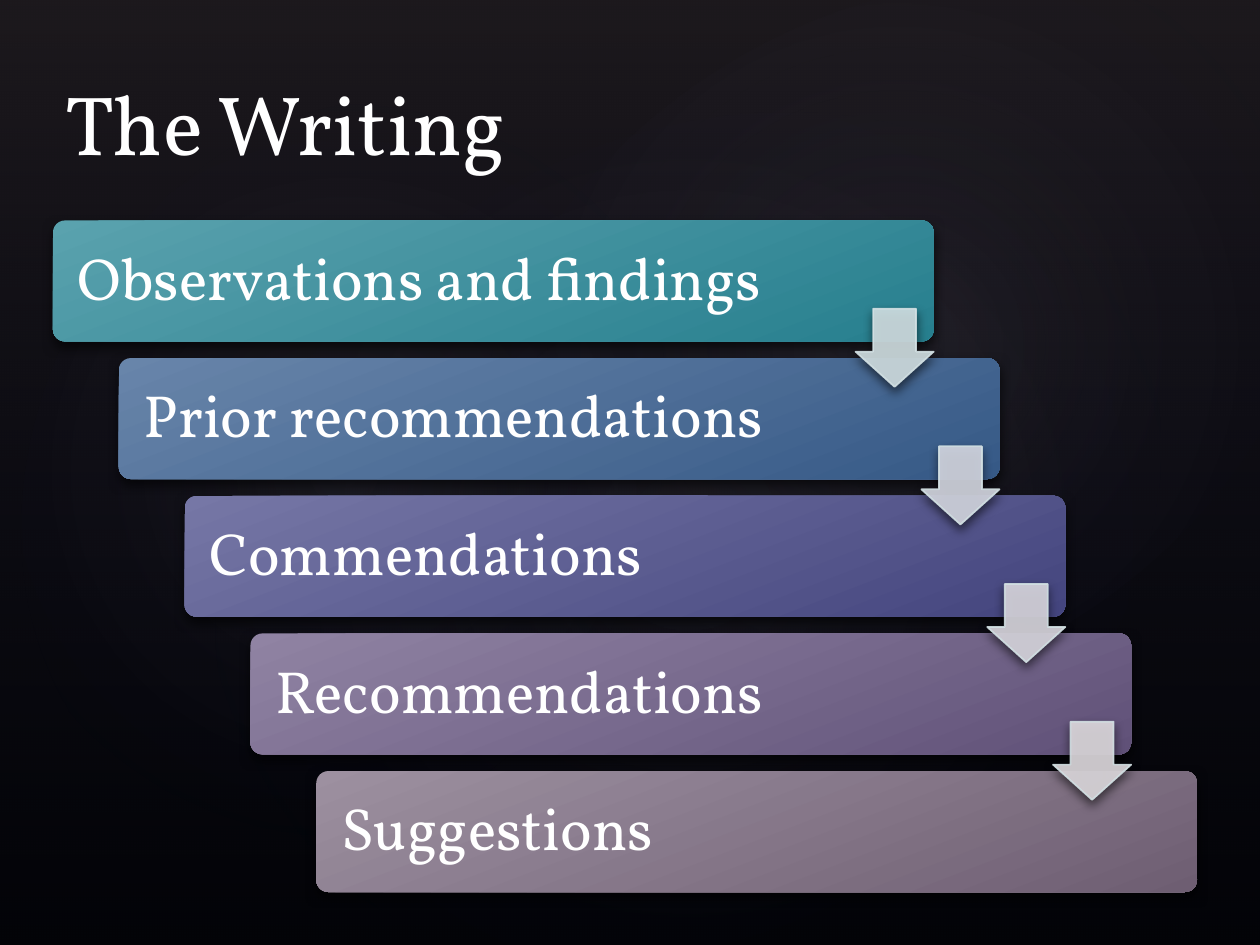
import pptx
import pptx.dml.color
import pptx.enum.shapes
import pptx.enum.text
import pptx.oxml
import pptx.oxml.ns
import pptx.util

RGBColor = pptx.dml.color.RGBColor
Inches = pptx.util.Inches
Pt = pptx.util.Pt
Shapes = pptx.enum.shapes.MSO_SHAPE
Anchor = pptx.enum.text.MSO_ANCHOR
Align = pptx.enum.text.PP_ALIGN

BLACK = RGBColor(0x00, 0x00, 0x00)
WHITE = RGBColor(0xFF, 0xFF, 0xFF)
NAVY = RGBColor(0x24, 0x28, 0x52)
TAUPE = RGBColor(0x50, 0x46, 0x52)
HAZE = RGBColor(0xC4, 0xBC, 0xC6)
ARROW_EDGE = RGBColor(0xD2, 0xE0, 0xE3)

FONT = "Vollkorn"
SLIDE_WIDTH, SLIDE_HEIGHT = 10, 7.5

# The staircase: every step moves one column right and one row down.
LEFT, TOP = 0.42, 1.75
COLUMN, ROW = 0.5225, 1.0925
BAR_WIDTH, BAR_HEIGHT = 6.99, 0.96
ARROW_SIZE, ARROW_DROP = 0.62, 0.7

# Text, gradient start, gradient end, and fill of the arrow to the next step
STEPS = [
    ("Observations and findings", RGBColor(0x5A, 0xA2, 0xAE),
     RGBColor(0x27, 0x7F, 0x8E), RGBColor(0xD2, 0xE0, 0xE3)),
    ("Prior recommendations", RGBColor(0x68, 0x85, 0xAA),
     RGBColor(0x36, 0x59, 0x86), RGBColor(0xD5, 0xD8, 0xE2)),
    ("Commendations", RGBColor(0x76, 0x77, 0xA6),
     RGBColor(0x44, 0x45, 0x7E), RGBColor(0xDA, 0xD8, 0xE0)),
    ("Recommendations", RGBColor(0x90, 0x83, 0xA3),
     RGBColor(0x60, 0x51, 0x78), RGBColor(0xDF, 0xDB, 0xDF)),
    ("Suggestions", RGBColor(0x9D, 0x90, 0xA0),
     RGBColor(0x6E, 0x5E, 0x72), None),
]

# Left, top, width, height, rotation and central opacity
GLOWS = [
    (1.5, 1.14, 7.92, 6.24, 328.7, 7),
    (-0.3, 1.28, 6.06, 4.9, 294.3, 8),
    (3.58, 0.13, 7.09, 5.2, 328.7, 8),
]


def add_plain_shape(slide, kind, left, top, width, height):
    """Add a preset shape without outline or shadow."""
    shape = slide.shapes.add_shape(
        kind, Inches(left), Inches(top), Inches(width), Inches(height))
    shape.shadow.inherit = False
    shape.line.fill.background()
    return shape


def fill_gradient(shape, stops, angle=None):
    """Fill with (position, colour, opacity) stops; radial without an angle."""
    stop_xml = "".join(
        f'<a:gs pos="{position * 1000}"><a:srgbClr val="{color}">'
        f'<a:alpha val="{opacity * 1000}"/></a:srgbClr></a:gs>'
        for position, color, opacity in stops)
    if angle is None:
        direction = ('<a:path path="circle"><a:fillToRect l="50000" t="50000" '
                     'r="50000" b="50000"/></a:path>')
    else:
        direction = f'<a:lin ang="{angle * 60000}" scaled="0"/>'
    gradient = pptx.oxml.parse_xml(
        f'<a:gradFill {pptx.oxml.ns.nsdecls("a")} rotWithShape="1">'
        f'<a:gsLst>{stop_xml}</a:gsLst>{direction}</a:gradFill>')
    shape.fill.background()
    properties = shape._element.spPr
    properties.replace(properties.find(pptx.oxml.ns.qn("a:noFill")), gradient)


def add_shadow(shape):
    effects = shape._element.spPr.find(pptx.oxml.ns.qn("a:effectLst"))
    effects.append(pptx.oxml.parse_xml(
        f'<a:outerShdw {pptx.oxml.ns.nsdecls("a")} blurRad="{Pt(6)}" '
        f'dist="{Pt(3)}" dir="5400000" algn="ctr" rotWithShape="0">'
        f'<a:srgbClr val="{BLACK}"><a:alpha val="60000"/></a:srgbClr>'
        '</a:outerShdw>'))


def set_solid(fill, color, opacity):
    fill.solid()
    fill.fore_color.rgb = color
    color_element = fill._xPr.find(".//" + pptx.oxml.ns.qn("a:srgbClr"))
    color_element.append(pptx.oxml.parse_xml(
        f'<a:alpha {pptx.oxml.ns.nsdecls("a")} val="{opacity * 1000}"/>'))


def add_text(paragraph, text, size):
    paragraph.alignment = Align.LEFT
    run = paragraph.add_run()
    run.text = text
    run.font.name = FONT
    run.font.size = Pt(size)
    run.font.color.rgb = WHITE


def add_background(slide):
    slide.background.fill.solid()
    slide.background.fill.fore_color.rgb = BLACK
    veil = add_plain_shape(
        slide, Shapes.RECTANGLE, 0, 0, SLIDE_WIDTH, SLIDE_HEIGHT)
    fill_gradient(veil, [(0, TAUPE, 36), (100, NAVY, 10)], angle=90)
    for left, top, width, height, rotation, opacity in GLOWS:
        glow = add_plain_shape(slide, Shapes.OVAL, left, top, width, height)
        glow.rotation = rotation
        fill_gradient(glow, [(0, HAZE, opacity), (58, NAVY, 0), (100, NAVY, 0)])


def add_title(slide, text):
    title = slide.shapes.title
    title.left, title.top = Inches(LEFT), Inches(0.42)
    title.width, title.height = Inches(9.08), Inches(1)
    title.text_frame.vertical_anchor = Anchor.BOTTOM
    add_text(title.text_frame.paragraphs[0], text, 48)
    slide.shapes._spTree.append(title._element)  # in front of the background


def add_bar(slide, index, text, start, end):
    bar = add_plain_shape(
        slide, Shapes.ROUNDED_RECTANGLE, LEFT + index * COLUMN,
        TOP + index * ROW, BAR_WIDTH, BAR_HEIGHT)
    bar.adjustments[0] = 0.1
    fill_gradient(bar, [(0, start, 100), (100, end, 100)], angle=69)
    add_shadow(bar)
    frame = bar.text_frame
    frame.word_wrap = True
    frame.vertical_anchor = Anchor.MIDDLE
    frame.margin_left = frame.margin_right = Inches(0.17)
    frame.margin_top = frame.margin_bottom = Inches(0.17)
    frame.paragraphs[0].line_spacing = 0.9
    add_text(frame.paragraphs[0], text, 34)


def add_arrow(slide, index, color):
    """Add the arrow from one bar to the next, flush with the bar's right."""
    arrow = add_plain_shape(
        slide, Shapes.DOWN_ARROW,
        LEFT + index * COLUMN + BAR_WIDTH - ARROW_SIZE,
        TOP + index * ROW + ARROW_DROP, ARROW_SIZE, ARROW_SIZE)
    arrow.adjustments[0] = 0.55
    arrow.adjustments[1] = 0.45
    set_solid(arrow.fill, color, 90)
    set_solid(arrow.line.fill, ARROW_EDGE, 90)
    arrow.line.width = Pt(1)
    add_shadow(arrow)


def main():
    presentation = pptx.Presentation()
    presentation.slide_width = Inches(SLIDE_WIDTH)
    presentation.slide_height = Inches(SLIDE_HEIGHT)
    slide = presentation.slides.add_slide(presentation.slide_layouts[5])

    add_background(slide)
    for index, (text, start, end, _) in enumerate(STEPS):
        add_bar(slide, index, text, start, end)
    for index, (_, _, _, arrow_color) in enumerate(STEPS[:-1]):
        add_arrow(slide, index, arrow_color)
    add_title(slide, "The Writing")
    presentation.save("out.pptx")


if __name__ == "__main__":
    main()
